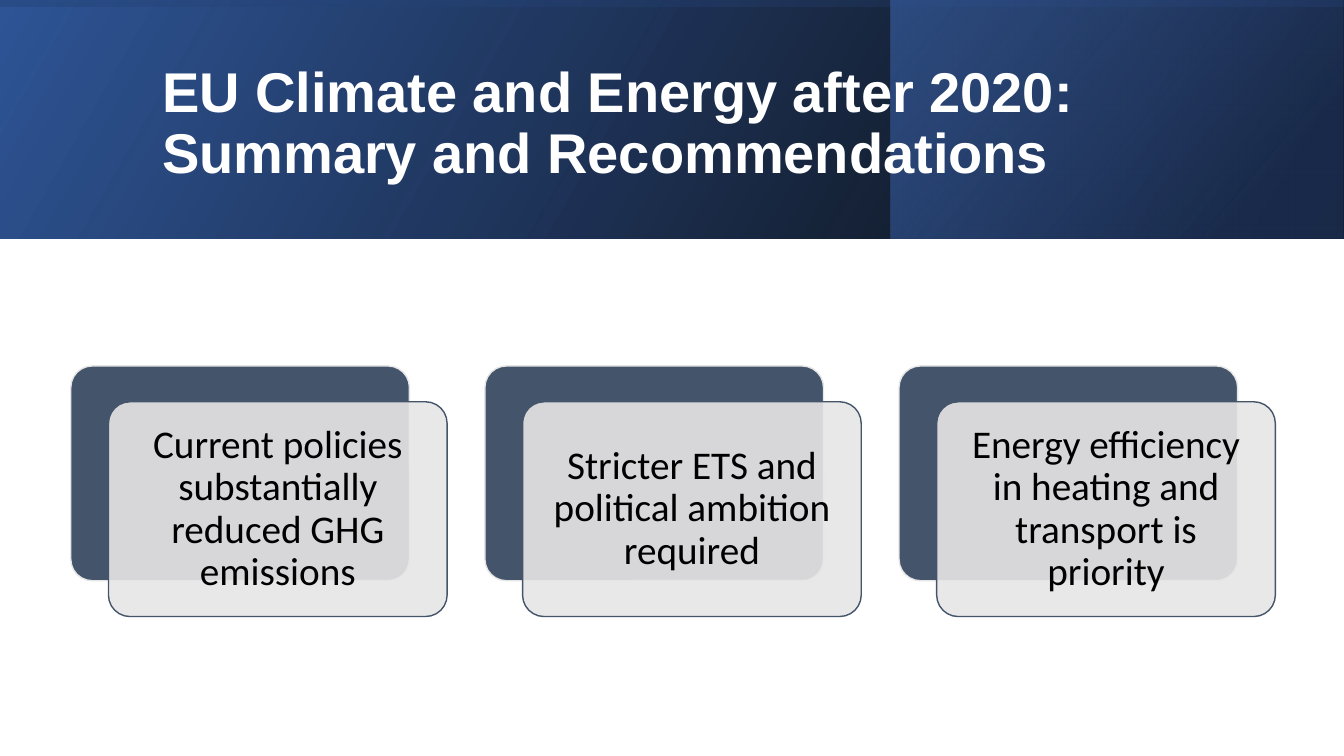
import pptx
import pptx.util
import pptx.oxml
import pptx.oxml.ns
import pptx.dml.color
import pptx.enum.shapes
import pptx.enum.text

TITLE = "EU Climate and Energy after 2020: Summary and Recommendations"
MESSAGES = [
    "Current policies substantially reduced GHG emissions",
    "Stricter ETS and political ambition required",
    "Energy efficiency in heating and transport is priority",
]
THEME = {
    "title_font": "Arial", "title_size": 40, "title_color": "FFFFFF",
    "card_font": "Calibri", "card_size": 28, "card_color": "000000",
    "dark": "44546A", "light": "E7E6E6", "card_opacity": 90,
    "base": [(0, "000000", 96), (100, "2F5597", 100)],
    "corner": [(19, "203864", 68), (100, "4472C4", 48)],
    "shade": [(23, "2F5597", 16), (99, "000000", 45)],
}
WIDTH, HEIGHT, BAND = 960, 540, 170.6
BANDS = [
    ((0, 0, WIDTH, BAND), 0, "base", 330),
    ((636.5, 0, 322.8, BAND), 0, "corner", 320),
    (((WIDTH - BAND) / 2, (BAND - WIDTH) / 2, BAND, WIDTH), 270, "shade", 350),
]
TITLE_PLACE = (108.7, 27.4, 765.4, 123.8)
CARD_LEFT, CARD_TOP, CARD_WIDTH, CARD_HEIGHT = 50.6, 261.4, 241.9, 153.4
CARD_STEP, SHIFT_X, SHIFT_Y, CARD_INSET = 295.8, 26.9, 25.6, 13
SHAPES = pptx.enum.shapes.MSO_SHAPE
ALIGN = pptx.enum.text.PP_ALIGN


def points(values):
    return [pptx.util.Pt(value) for value in values]


def color(name):
    return pptx.dml.color.RGBColor.from_string(name)


def add_band(page, place, turn, stops, angle):
    band = page.shapes.add_shape(SHAPES.RECTANGLE, *points(place))
    band.shadow.inherit = False
    band.line.fill.background()
    band.rotation = turn
    properties = band.element.spPr
    properties.find(pptx.oxml.ns.qn("a:xfrm")).set("flipH", "1")
    marks = "".join(
        f'<a:gs pos="{position * 1000}"><a:srgbClr val="{tone}">'
        f'<a:alpha val="{opacity * 1000}"/></a:srgbClr></a:gs>'
        for position, tone, opacity in stops
    )
    gradient = pptx.oxml.parse_xml(
        f'<a:gradFill {pptx.oxml.ns.nsdecls("a")} rotWithShape="1">'
        f'<a:gsLst>{marks}</a:gsLst><a:lin ang="{angle * 60000}" scaled="0"/></a:gradFill>'
    )
    properties.find(pptx.oxml.ns.qn("a:prstGeom")).addnext(gradient)


def add_card(page, left, top, fill, line):
    card = page.shapes.add_shape(
        SHAPES.ROUNDED_RECTANGLE, *points((left, top, CARD_WIDTH, CARD_HEIGHT))
    )
    card.adjustments[0] = 0.1
    card.shadow.inherit = False
    card.fill.solid()
    card.fill.fore_color.rgb = color(THEME[fill])
    card.line.color.rgb = color(THEME[line])
    card.line.width = pptx.util.Pt(1)
    return card


def set_opacity(shape, percent):
    tone = shape.element.spPr.find(pptx.oxml.ns.qn("a:solidFill"))[0]
    tone.append(pptx.oxml.parse_xml(
        f'<a:alpha {pptx.oxml.ns.nsdecls("a")} val="{percent * 1000}"/>'
    ))


def write(box, text, role, align, bold=False):
    frame = box.text_frame
    frame.word_wrap = True
    frame.vertical_anchor = pptx.enum.text.MSO_ANCHOR.MIDDLE
    para = frame.paragraphs[0]
    para.alignment = align
    para.line_spacing = 0.9
    span = para.add_run()
    span.text = text
    span.font.name = THEME[role + "_font"]
    span.font.size = pptx.util.Pt(THEME[role + "_size"])
    span.font.color.rgb = color(THEME[role + "_color"])
    span.font.bold = bold


def main():
    deck = pptx.Presentation()
    deck.slide_width, deck.slide_height = points((WIDTH, HEIGHT))
    page = deck.slides.add_slide(deck.slide_layouts[6])

    for place, turn, stops, angle in BANDS:
        add_band(page, place, turn, THEME[stops], angle)
    title = page.shapes.add_textbox(*points(TITLE_PLACE))
    write(title, TITLE, "title", ALIGN.LEFT, bold=True)

    for index, message in enumerate(MESSAGES):
        left = CARD_LEFT + index * CARD_STEP
        add_card(page, left, CARD_TOP, "dark", "light")
        front = add_card(page, left + SHIFT_X, CARD_TOP + SHIFT_Y, "light", "dark")
        set_opacity(front, THEME["card_opacity"])
        frame = front.text_frame
        frame.margin_left = frame.margin_right = pptx.util.Pt(CARD_INSET)
        frame.margin_top = frame.margin_bottom = pptx.util.Pt(CARD_INSET)
        write(front, message, "card", ALIGN.CENTER)

    deck.save("out.pptx")


if __name__ == "__main__":
    main()
